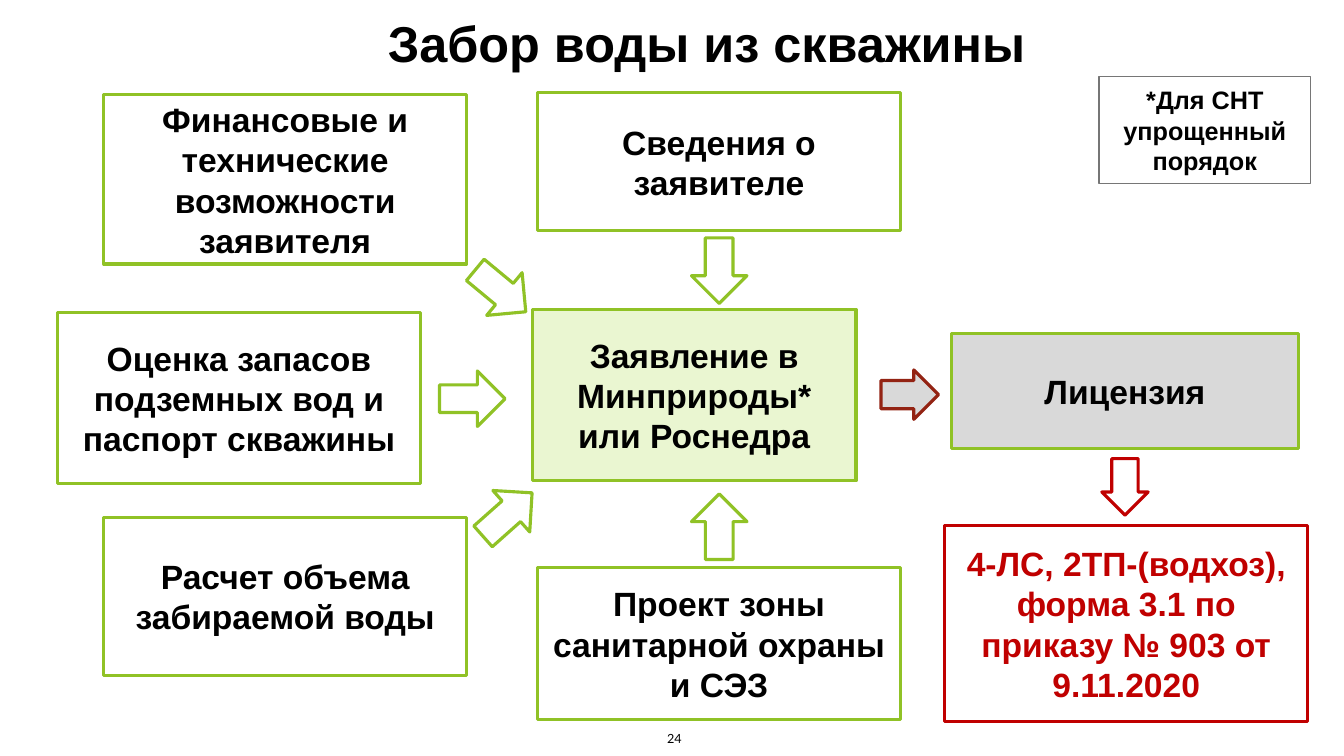
"""Build a flow diagram slide on licensing water intake from a well."""
from pptx import Presentation, util as u
from pptx.dml import color
from pptx.enum import shapes, text

THEME = {
    "ink": "000000", "white": "FFFFFF", "green": "90C226", "pale": "EAF6D1",
    "grey": "D9D9D9", "red": "C00000", "brick": "932313", "frame": "767676",
    "font": "Arial", "number_font": "Lato",
    "title": 36, "body": 24, "note": 18, "number": 9, "line": 2.25, "thin": 1,
}

deck = Presentation()
deck.slide_width, deck.slide_height = u.Inches(13.33), u.Inches(7.5)
page = deck.slides.add_slide(deck.slide_layouts[6])
COLUMN, ROW = deck.slide_width / 100, deck.slide_height / 100


def add_figure(kind, left, top, width, height, fill, line, weight="line"):
    """Add a preset shape placed in hundredths of the slide."""
    figure = page.shapes.add_shape(
        kind, round(left * COLUMN), round(top * ROW),
        round(width * COLUMN), round(height * ROW))
    figure.shadow.inherit = False
    if fill:
        figure.fill.solid()
        figure.fill.fore_color.rgb = color.RGBColor.from_string(THEME[fill])
    else:
        figure.fill.background()
    figure.line.color.rgb = color.RGBColor.from_string(THEME[line])
    figure.line.width = u.Pt(THEME[weight])
    return figure


def write(box, words, size="body", ink="ink", font="font", bold=True,
          align=text.PP_ALIGN.CENTER):
    """Fill a box with one wrapped, vertically centred paragraph."""
    frame = box.text_frame
    frame.word_wrap = True
    frame.vertical_anchor = text.MSO_ANCHOR.MIDDLE
    para = frame.paragraphs[0]
    para.text, para.alignment = words, align
    para.font.name, para.font.size = THEME[font], u.Pt(THEME[size])
    para.font.bold = bold
    para.font.color.rgb = color.RGBColor.from_string(THEME[ink])


title = page.shapes.add_textbox(
    round(22.28 * COLUMN), round(0.93 * ROW), round(60.6 * COLUMN), round(9.47 * ROW))
write(title, "Забор воды из скважины", "title")

ARROW = (4.13, 8.67)
arrows = [
    (35.18, 34.13, *ARROW, 309.7, 0.5, "white", "green"),
    (51.45, 31.47, *ARROW, 0, 0.5, "white", "green"),
    (33.08, 48.4, *ARROW, 270, 0.5, "white", "green"),
    (35.7, 63.73, *ARROW, 228.4, 0.5, "white", "green"),
    (51.45, 65.33, *ARROW, 180, 0.5, "white", "green"),
    (65.85, 48.4, 3.68, 7.6, 270, 0.57, "grey", "brick"),
    (81.98, 60.67, 3.45, 7.47, 0, 0.57, None, "red"),
]
for left, top, width, height, turn, shaft, fill, line in arrows:
    arrow = add_figure(shapes.MSO_SHAPE.DOWN_ARROW, left, top, width, height, fill, line)
    arrow.rotation = turn
    arrow.adjustments[0] = shaft

WIDE = 27
boxes = [
    ("Финансовые и технические возможности заявителя",
     7.72, 12.53, WIDE, 22.4, "white", "green", "ink"),
    ("Оценка запасов подземных вод и паспорт скважины",
     4.28, 41.33, WIDE, 22.67, "white", "green", "ink"),
    ("Расчет объема забираемой воды",
     7.72, 68.4, WIDE, 20.93, "white", "green", "ink"),
    ("Сведения о заявителе", 40, 12.27, WIDE, 18.27, "white", "green", "ink"),
    ("Заявление в Минприроды* или Роснедра",
     39.6, 40.93, 24.1, 22.67, "pale", "green", "ink"),
    ("Проект зоны санитарной охраны и СЭЗ",
     40, 75.07, WIDE, 20.13, "white", "green", "ink"),
    ("Лицензия", 70.8, 44.13, 25.8, 15.2, "grey", "green", "ink"),
    ("4-ЛС, 2ТП-(водхоз), форма 3.1 по приказу № 903 от 9.11.2020",
     70.3, 69.47, WIDE, 26, None, "red", "red"),
]
for words, left, top, width, height, fill, line, ink in boxes:
    box = add_figure(shapes.MSO_SHAPE.RECTANGLE, left, top, width, height, fill, line)
    write(box, words, ink=ink)

note = add_figure(shapes.MSO_SHAPE.RECTANGLE, 81.77, 10.13, 15.75, 14.13,
                  "white", "frame", "thin")
write(note, "*Для СНТ упрощенный порядок", "note")

number = page.shapes.add_textbox(
    round(45.83 * COLUMN), round(95.47 * ROW), round(5.63 * COLUMN), round(4.53 * ROW))
write(number, "24", "number", font="number_font", bold=False, align=text.PP_ALIGN.RIGHT)

deck.save("out.pptx")
